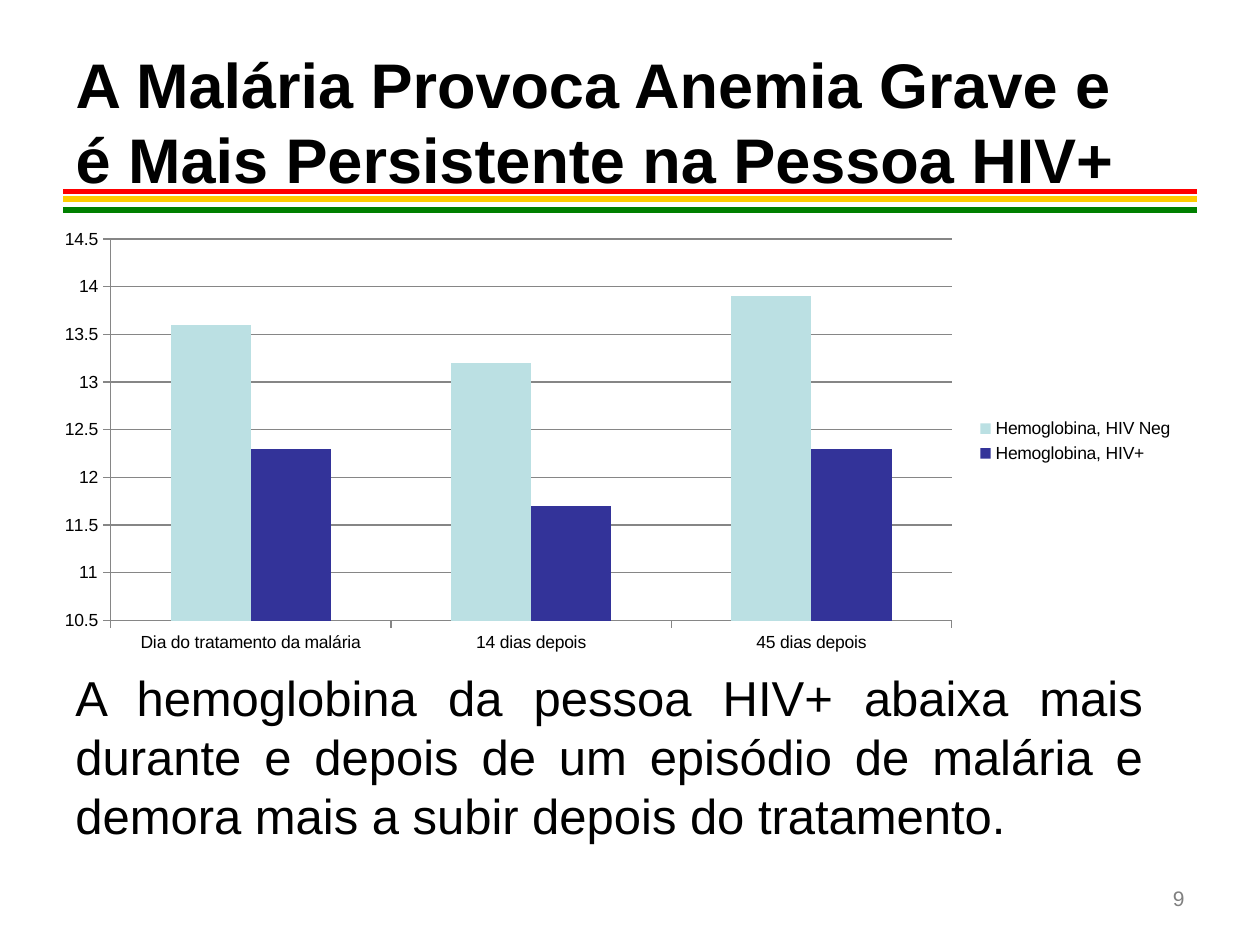
import pptx
import pptx.chart.data
import pptx.dml.color
import pptx.enum.chart
import pptx.enum.shapes
import pptx.enum.text
import pptx.oxml
import pptx.util

Pt = pptx.util.Pt
RGBColor = pptx.dml.color.RGBColor
ALIGN = pptx.enum.text.PP_ALIGN
ANCHOR = pptx.enum.text.MSO_ANCHOR

# Content
TITLE = "A Malária Provoca Anemia Grave e é Mais Persistente na Pessoa HIV+"
BODY = ("A hemoglobina da pessoa HIV+ abaixa mais durante e depois de um "
        "episódio de malária e demora mais a subir depois do tratamento.")
PAGE_NUMBER = "9"
CATEGORIES = ["Dia do tratamento da malária", "14 dias depois", "45 dias depois"]

BLACK = RGBColor(0x00, 0x00, 0x00)
GRAY = RGBColor(0x80, 0x80, 0x80)
AXIS_GRAY = RGBColor(0x86, 0x86, 0x86)
RED = RGBColor(0xFF, 0x00, 0x00)
YELLOW = RGBColor(0xFF, 0xCC, 0x00)
GREEN = RGBColor(0x00, 0x80, 0x00)
PALE_TEAL = RGBColor(0xBB, 0xE0, 0xE3)
INDIGO = RGBColor(0x33, 0x33, 0x99)

SERIES = [
    ("Hemoglobina, HIV Neg", (13.6, 13.2, 13.9), PALE_TEAL),
    ("Hemoglobina, HIV+", (12.3, 11.7, 12.3), INDIGO),
]
STRIPES = [(113.75, YELLOW), (109.25, RED), (120, GREEN)]
STRIPE_LEFT, STRIPE_RIGHT = 36, 684


def set_values(target, values):
    for name, value in values.items():
        setattr(target, name, value)


def write_text(shape, text, box, size, color, bold=False,
               alignment=ALIGN.LEFT, anchor=ANCHOR.TOP):
    for name, value in zip(("left", "top", "width", "height"), box):
        setattr(shape, name, Pt(value))
    frame = shape.text_frame
    frame.text = text
    set_values(frame, {"word_wrap": True, "vertical_anchor": anchor,
                       "auto_size": pptx.enum.text.MSO_AUTO_SIZE.NONE})
    paragraph = frame.paragraphs[0]
    paragraph.alignment = alignment
    font = paragraph.runs[0].font
    set_values(font, {"name": "Arial", "size": Pt(size), "bold": bold})
    font.color.rgb = color


presentation = pptx.Presentation()
set_values(presentation, {"slide_width": Pt(720), "slide_height": Pt(540)})
slide = presentation.slides.add_slide(presentation.slide_layouts[5])

# Stripes under the title
for y, color in STRIPES:
    stripe = slide.shapes.add_connector(
        pptx.enum.shapes.MSO_CONNECTOR.STRAIGHT,
        Pt(STRIPE_LEFT), Pt(y), Pt(STRIPE_RIGHT), Pt(y))
    stripe.line.width = Pt(3)
    stripe.line.color.rgb = color
    stripe._element.spPr.append(
        pptx.oxml.parse_xml('<a:effectLst xmlns:a="http://schemas.openxmlformats.org/drawingml/2006/main"/>'))

# Texts
write_text(slide.shapes.title, TITLE, (36, 24, 618, 90), 36, BLACK,
           bold=True, anchor=ANCHOR.MIDDLE)
for text, box, size, color, alignment in [
    (BODY, (36, 378, 624, 114), 28, BLACK, ALIGN.JUSTIFY),
    (PAGE_NUMBER, (600, 502.5, 84, 37.5), 12, GRAY, ALIGN.RIGHT),
]:
    text_box = slide.shapes.add_textbox(0, 0, 0, 0)
    write_text(text_box, text, box, size, color, alignment=alignment)

# Haemoglobin chart
chart_data = pptx.chart.data.CategoryChartData()
chart_data.categories = CATEGORIES
for name, values, color in SERIES:
    chart_data.add_series(name, values)
chart = slide.shapes.add_chart(
    pptx.enum.chart.XL_CHART_TYPE.COLUMN_CLUSTERED,
    Pt(24), Pt(126), Pt(654), Pt(252), chart_data).chart
set_values(chart, {"has_title": False, "has_legend": True})
set_values(chart.font, {"name": "Arial", "size": Pt(10)})
chart.font.color.rgb = BLACK
set_values(chart.legend, {"position": pptx.enum.chart.XL_LEGEND_POSITION.RIGHT,
                          "include_in_layout": False})

plot = chart.plots[0]
set_values(plot, {"gap_width": 150, "overlap": 0, "vary_by_categories": False})
for series, (name, values, color) in zip(plot.series, SERIES):
    series.format.fill.solid()
    series.format.fill.fore_color.rgb = color

set_values(chart.value_axis, {"minimum_scale": 10.5, "maximum_scale": 14.5,
                              "major_unit": 0.5, "has_major_gridlines": True})
for axis in (chart.category_axis, chart.value_axis):
    axis.major_tick_mark = pptx.enum.chart.XL_TICK_MARK.OUTSIDE
    axis.format.line.color.rgb = AXIS_GRAY
chart.value_axis.major_gridlines.format.line.color.rgb = AXIS_GRAY

presentation.save("out.pptx")
